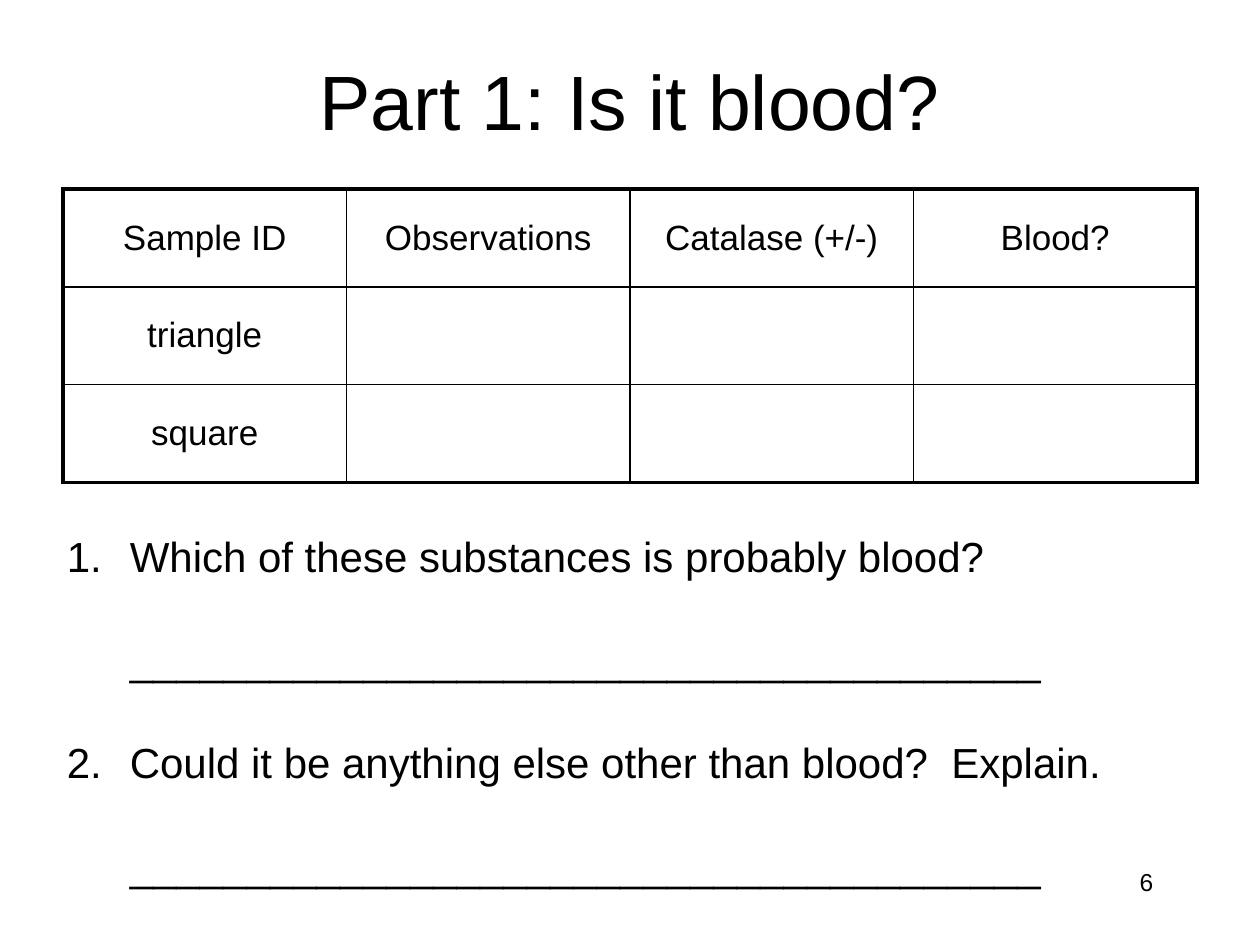
from lxml import etree
from pptx import Presentation
from pptx import util as u
from pptx.dml.color import RGBColor
from pptx.enum import text
from pptx.oxml.ns import qn

BLACK = RGBColor(0, 0, 0)
WHITE = RGBColor(255, 255, 255)
FONT = "Arial"
OUTER, INNER = 2.25, 1
HEADERS = ["Sample ID", "Observations", "Catalase (+/-)", "Blood?"]
SAMPLES = ["triangle", "square"]
QUESTIONS = ["Which of these substances is probably blood?",
             "Could it be anything else other than blood?  Explain."]
ANSWER_LINE = "_" * 39


def place(sp, box):
    sp.left, sp.top, sp.width, sp.height = (u.Inches(v) for v in box)


def format_paragraph(p, size, align):
    p.alignment = align
    for r in p.runs:
        r.font.name = FONT
        r.font.size = u.Pt(size)
        r.font.color.rgb = BLACK


def add_border(cell, side, width):
    tcPr = cell._tc.get_or_add_tcPr()
    ln = etree.SubElement(tcPr, qn("a:ln" + side), w=str(u.Pt(width)))
    fill = etree.SubElement(ln, qn("a:solidFill"))
    etree.SubElement(fill, qn("a:srgbClr"), val=str(BLACK))


def add_title(s, box):
    sp = s.shapes.title
    place(sp, box)
    tf = sp.text_frame
    tf.text = "Part 1: Is it blood?"
    tf.vertical_anchor = text.MSO_ANCHOR.MIDDLE
    format_paragraph(tf.paragraphs[0], 44, text.PP_ALIGN.CENTER)


def add_results_table(s, box):
    rows, cols = len(SAMPLES) + 1, len(HEADERS)
    table = s.shapes.add_table(rows, cols, *(u.Inches(v) for v in box)).table
    table.first_row = table.horz_banding = False
    labels = [HEADERS] + [[name] + [""] * (cols - 1) for name in SAMPLES]
    for i, row in enumerate(labels):
        for j, label in enumerate(row):
            cell = table.cell(i, j)
            cell.text = label
            cell.vertical_anchor = text.MSO_ANCHOR.MIDDLE
            format_paragraph(cell.text_frame.paragraphs[0], 20, text.PP_ALIGN.CENTER)
            edges = {"L": j == 0, "R": j == cols - 1, "T": i == 0, "B": i == rows - 1}
            for side, outside in edges.items():
                add_border(cell, side, OUTER if outside else INNER)
            cell.fill.background()


def add_questions(s, box):
    sp = s.placeholders[1]
    place(sp, box)
    tf = sp.text_frame
    tf.word_wrap = False
    tf.auto_size = text.MSO_AUTO_SIZE.SHAPE_TO_FIT_TEXT
    tf.vertical_anchor = text.MSO_ANCHOR.TOP
    tf.text = "\n".join(f"{question}\n{ANSWER_LINE}" for question in QUESTIONS)
    for i, p in enumerate(tf.paragraphs):
        format_paragraph(p, 24, text.PP_ALIGN.LEFT)
        p.space_before = u.Pt(30 if i else 0)
        pPr = p._p.get_or_add_pPr()
        pPr.set("marL", str(u.Inches(0.5)))
        number, is_answer = divmod(i, 2)
        if is_answer:
            pPr.set("indent", "0")
            etree.SubElement(pPr, qn("a:buNone"))
        else:
            pPr.set("indent", str(u.Inches(-0.5)))
            etree.SubElement(pPr, qn("a:buFont"), typeface=FONT)
            etree.SubElement(pPr, qn("a:buAutoNum"), type="arabicPeriod",
                             startAt=str(number + 1))


def add_page_number(s, box):
    tf = s.shapes.add_textbox(*(u.Inches(v) for v in box)).text_frame
    tf.word_wrap = True
    tf.text = "6"
    format_paragraph(tf.paragraphs[0], 14, text.PP_ALIGN.RIGHT)


def main():
    prs = Presentation()
    prs.slide_width, prs.slide_height = u.Inches(10), u.Inches(7.5)
    s = prs.slides.add_slide(prs.slide_layouts[1])
    s.background.fill.solid()
    s.background.fill.fore_color.rgb = WHITE
    add_page_number(s, (7.17, 6.83, 2.08, 0.5))
    add_title(s, (0.75, 0.17, 8.5, 1.25))
    add_results_table(s, (0.5, 1.5, 9, 2.33))
    add_questions(s, (0.43, 4.16, 8.41, 2.9))
    prs.save("out.pptx")


if __name__ == "__main__":
    main()
